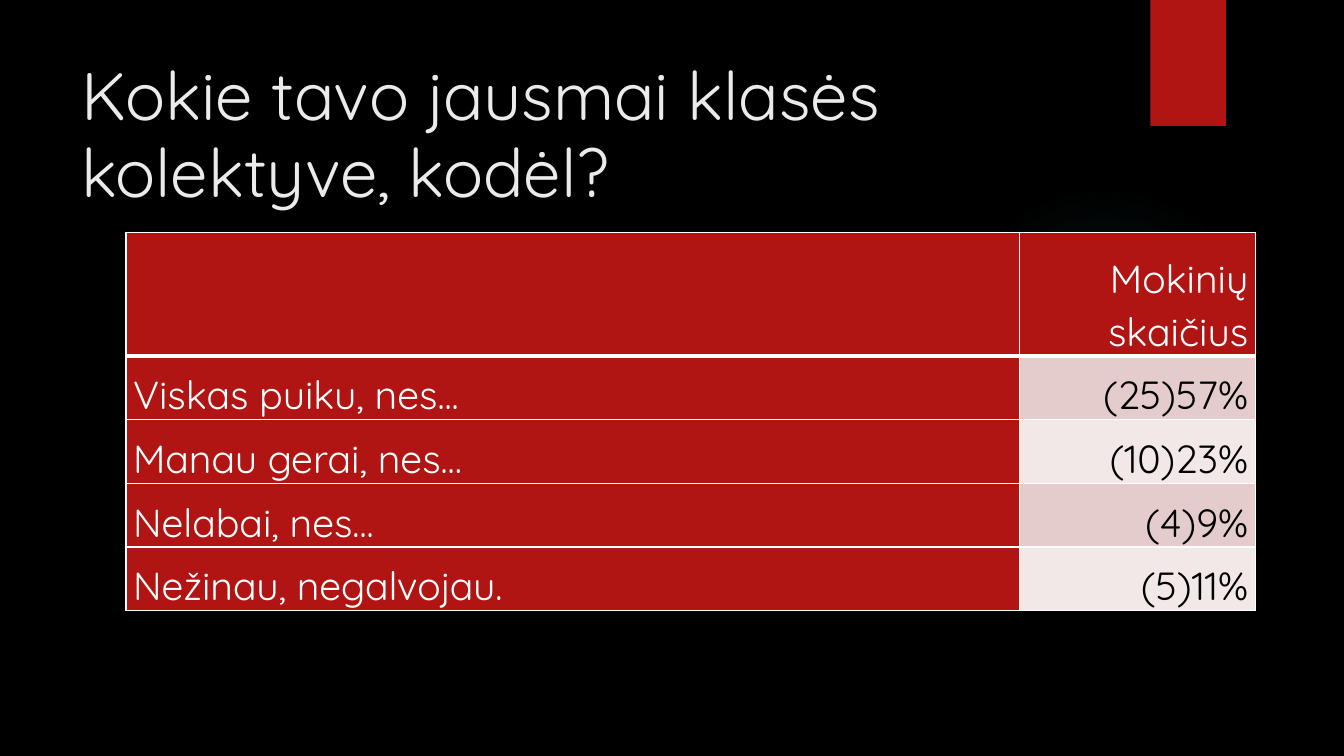
from dataclasses import dataclass

from pptx import Presentation
from pptx.dml.color import RGBColor
from pptx.enum.shapes import MSO_SHAPE
from pptx.enum.text import MSO_ANCHOR, PP_ALIGN
from pptx.oxml import parse_xml
from pptx.oxml.ns import nsdecls
from pptx.util import Inches, Pt


@dataclass(frozen=True)
class Theme:
    font: str = "Quicksand"
    back: str = "000000"
    red: str = "B01513"
    glow: str = "50B9C1"
    title: str = "EBEBEB"
    light: str = "FFFFFF"
    dark: str = "000000"
    bands: tuple = ("E4CCCC", "F2E8E7")
    title_size: int = 48
    cell_size: int = 28


THEME = Theme()
ROWS = [
    ("", "Mokinių skaičius"),
    ("Viskas puiku, nes...", "(25)57%"),
    ("Manau gerai, nes...", "(10)23%"),
    ("Nelabai, nes...", "(4)9%"),
    ("Nežinau, negalvojau.", "(5)11%"),
]


def paint(fill, color):
    fill.solid()
    fill.fore_color.rgb = RGBColor.from_string(color)


def style(para, size, color):
    para.font.name = THEME.font
    para.font.size = Pt(size)
    para.font.bold = False
    para.font.color.rgb = RGBColor.from_string(color)


def add_plain(slide, kind, box):
    """Add a preset shape with neither line nor shadow."""
    shape = slide.shapes.add_shape(kind, *map(Inches, box))
    shape.shadow.inherit = False
    shape.line.fill.background()
    return shape


def add_glow(slide, box):
    """Add a faint round light that fades towards its rim."""
    glow = add_plain(slide, MSO_SHAPE.OVAL, box)
    stops = "".join(
        f'<a:gs pos="{pos * 1000}"><a:srgbClr val="{THEME.glow}">'
        f'<a:alpha val="{alpha * 1000}"/></a:srgbClr></a:gs>'
        for pos, alpha in ((0, 7), (36, 6), (69, 0))
    )
    grad = parse_xml(
        f'<a:gradFill {nsdecls("a")}><a:gsLst>{stops}</a:gsLst>'
        '<a:path path="circle">'
        '<a:fillToRect l="50000" t="50000" r="50000" b="50000"/>'
        '</a:path></a:gradFill>'
    )
    glow.element.spPr.prstGeom.addnext(grad)


def add_tab(slide, box):
    paint(add_plain(slide, MSO_SHAPE.RECTANGLE, box).fill, THEME.red)


def add_title(slide, box, text):
    frame = slide.shapes.add_textbox(*map(Inches, box)).text_frame
    frame.word_wrap = True
    frame.margin_top = Inches(0.09)
    frame.vertical_anchor = MSO_ANCHOR.TOP
    frame.text = text
    para = frame.paragraphs[0]
    para.line_spacing = 0.95
    style(para, THEME.title_size, THEME.title)


def add_borders(cell, widths):
    """Draw cell edges; widths maps L, R, T and B to points."""
    props = cell._tc.get_or_add_tcPr()
    for spot, (side, width) in enumerate(widths.items()):
        props.insert(spot, parse_xml(
            f'<a:ln{side} {nsdecls("a")} w="{Pt(width)}"><a:solidFill>'
            f'<a:srgbClr val="{THEME.light}"/></a:solidFill></a:ln{side}>'
        ))


def fill_cell(cell, text, row, col):
    value = row > 0 and col > 0
    paint(cell.fill, THEME.bands[(row - 1) % 2] if value else THEME.red)
    add_borders(cell, {"L": 1, "R": 1, "T": 3 if row == 1 else 1,
                       "B": 3 if row == 0 else 1})
    cell.vertical_anchor = MSO_ANCHOR.BOTTOM
    cell.margin_left = cell.margin_right = Inches(0.07)
    cell.margin_top = cell.margin_bottom = 0
    cell.text_frame.text = text
    para = cell.text_frame.paragraphs[0]
    para.alignment = PP_ALIGN.RIGHT if col else PP_ALIGN.LEFT
    para.line_spacing = 1.07
    para.space_after = Pt(8)
    style(para, THEME.cell_size, THEME.dark if value else THEME.light)


def add_answers(slide, box, rows):
    left, top, width, height = box
    head, last = 1.22, 2.34
    table = slide.shapes.add_table(
        len(rows), len(rows[0]), *map(Inches, box)).table
    table.columns[0].width = Inches(width - last)
    table.columns[1].width = Inches(last)
    step = (height - head) / (len(rows) - 1)
    for r, texts in enumerate(rows):
        table.rows[r].height = Inches(step if r else head)
        for c, text in enumerate(texts):
            fill_cell(table.cell(r, c), text, r, c)


def main():
    deck = Presentation()
    deck.slide_width, deck.slide_height = Inches(13.33), Inches(7.5)
    slide = deck.slides.add_slide(deck.slide_layouts[6])
    paint(slide.background.fill, THEME.back)
    add_glow(slide, (9.41, 1.83, 3.08, 3.08))
    add_tab(slide, (11.41, 0, 0.75, 1.25))
    add_title(slide, (0.71, 0.5, 10.29, 1.53),
              "Kokie tavo jausmai klasės kolektyve, kodėl?")
    add_answers(slide, (1.25, 2.31, 11.2, 3.75), ROWS)
    deck.save("out.pptx")


if __name__ == "__main__":
    main()
